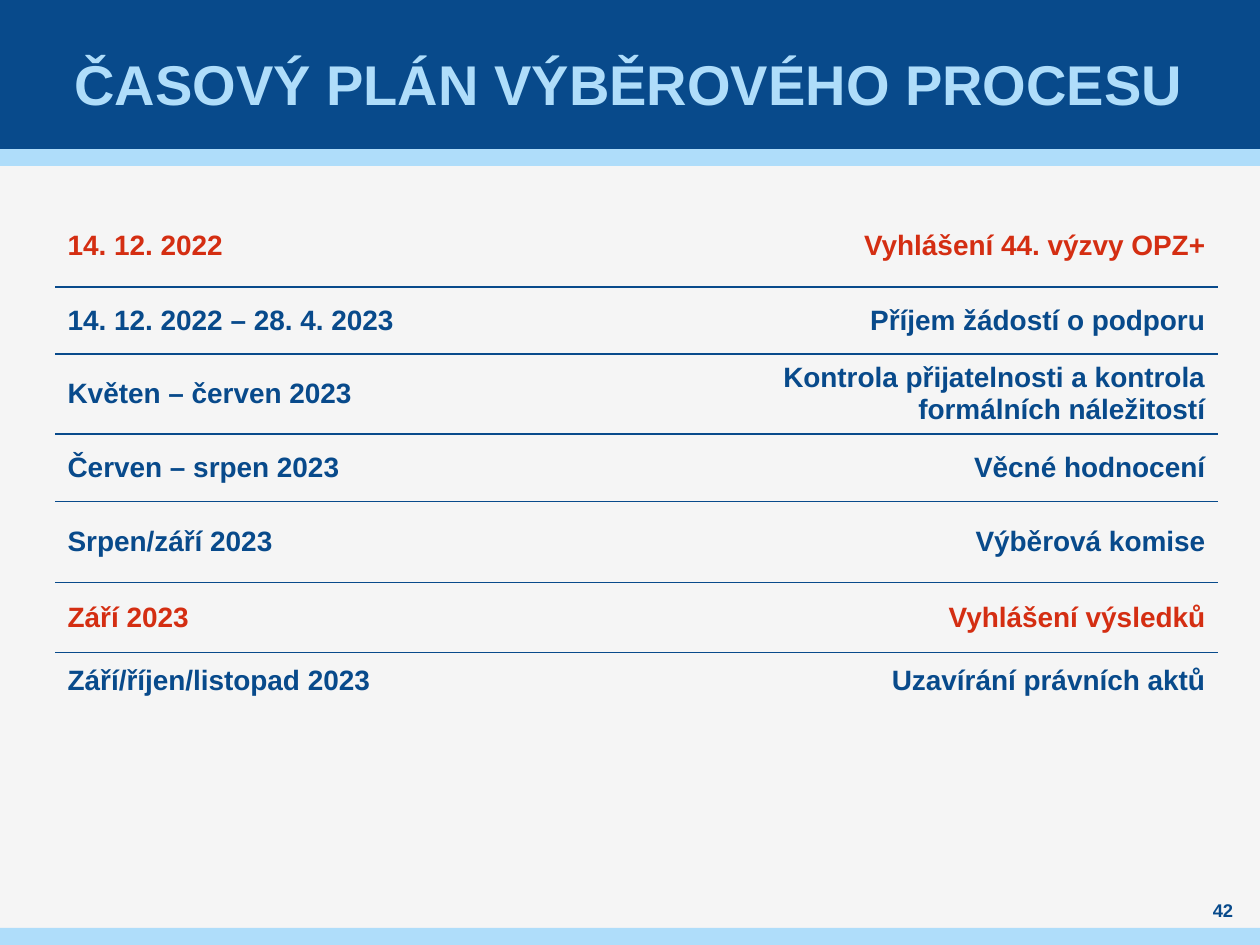
from lxml import etree
from pptx import Presentation
from pptx.dml.color import RGBColor
from pptx.enum.shapes import MSO_SHAPE
from pptx.enum.text import MSO_ANCHOR, PP_ALIGN
from pptx.oxml.ns import qn
from pptx.util import Pt

PX = 914400 // 126
RECTANGLE = MSO_SHAPE.RECTANGLE
MIDDLE = MSO_ANCHOR.MIDDLE
LEFT, CENTER, RIGHT = PP_ALIGN.LEFT, PP_ALIGN.CENTER, PP_ALIGN.RIGHT

NAVY, SKY, RED, PAPER = "084A8B", "AFDDFA", "D42E12", "F5F5F5"
WIDTH, HEIGHT = 1260, 945

SCHEDULE = [
    (83, RED, "14. 12. 2022", "Vyhlášení 44. výzvy OPZ+"),
    (67, NAVY, "14. 12. 2022 – 28. 4. 2023", "Příjem žádostí o podporu"),
    (75, NAVY, "Květen – červen 2023",
     "Kontrola přijatelnosti a kontrola formálních náležitostí"),
    (68, NAVY, "Červen – srpen 2023", "Věcné hodnocení"),
    (81, NAVY, "Srpen/září 2023", "Výběrová komise"),
    (70, RED, "Září 2023", "Vyhlášení výsledků"),
    (57, NAVY, "Září/říjen/listopad 2023", "Uzavírání právních aktů"),
]
COLUMN_WIDTHS = (570, 593)


def px(*lengths):
    return [length * PX for length in lengths]


def color(value):
    return RGBColor.from_string(value)


def write(frame, text, size, text_color, align):
    frame.text = text
    frame.word_wrap = True
    paragraph = frame.paragraphs[0]
    paragraph.alignment = align
    font = paragraph.runs[0].font
    font.name = "Arial"
    font.size = Pt(size)
    font.bold = True
    font.color.rgb = color(text_color)


def add_band(slide, top, height, fill):
    band = slide.shapes.add_shape(RECTANGLE, *px(0, top, WIDTH, height))
    band.shadow.inherit = False
    band.fill.solid()
    band.fill.fore_color.rgb = color(fill)
    band.line.fill.background()


def add_label(slide, box, text, size, text_color):
    frame = slide.shapes.add_textbox(*px(*box)).text_frame
    frame.margin_left = frame.margin_right = 0
    frame.margin_top = frame.margin_bottom = 0
    frame.vertical_anchor = MIDDLE
    write(frame, text, size, text_color, CENTER)


def set_borders(cell, ruled_sides):
    properties = cell._tc.get_or_add_tcPr()
    for side in ("L", "R", "T", "B"):
        line = etree.SubElement(properties, qn(f"a:ln{side}"), w=str(Pt(1)))
        if side in ruled_sides:
            fill = etree.SubElement(line, qn("a:solidFill"))
            etree.SubElement(fill, qn("a:srgbClr"), val=NAVY)
        else:
            etree.SubElement(line, qn("a:noFill"))


def add_schedule(slide, left, top):
    heights = [entry[0] for entry in SCHEDULE]
    box = px(left, top, sum(COLUMN_WIDTHS), sum(heights))
    table = slide.shapes.add_table(len(SCHEDULE), len(COLUMN_WIDTHS), *box).table
    table.first_row = False
    table.horz_banding = False
    for column, width in zip(table.columns, COLUMN_WIDTHS):
        column.width = width * PX
    last = len(SCHEDULE) - 1
    for index, (height, text_color, period, stage) in enumerate(SCHEDULE):
        table.rows[index].height = height * PX
        ruled_sides = ("T" if index > 0 else "") + ("B" if index < last else "")
        for column, (text, align) in enumerate(((period, LEFT), (stage, RIGHT))):
            cell = table.cell(index, column)
            cell.vertical_anchor = MIDDLE
            set_borders(cell, ruled_sides)
            cell.fill.background()
            write(cell.text_frame, text, 16, text_color, align)


def main():
    deck = Presentation()
    deck.slide_width, deck.slide_height = px(WIDTH, HEIGHT)
    slide = deck.slides.add_slide(deck.slide_layouts[6])
    slide.background.fill.solid()
    slide.background.fill.fore_color.rgb = color(PAPER)

    add_band(slide, 149, 17, SKY)
    add_band(slide, 0, 149, NAVY)
    add_band(slide, 928, 17, SKY)
    add_label(slide, (49, 9, 1160, 149), "ČASOVÝ PLÁN VÝBĚROVÉHO PROCESU", 32, SKY)
    add_label(slide, (1191, 898, 64, 25), "42", 10.5, NAVY)
    add_schedule(slide, 55, 204)
    deck.save("out.pptx")


if __name__ == "__main__":
    main()
